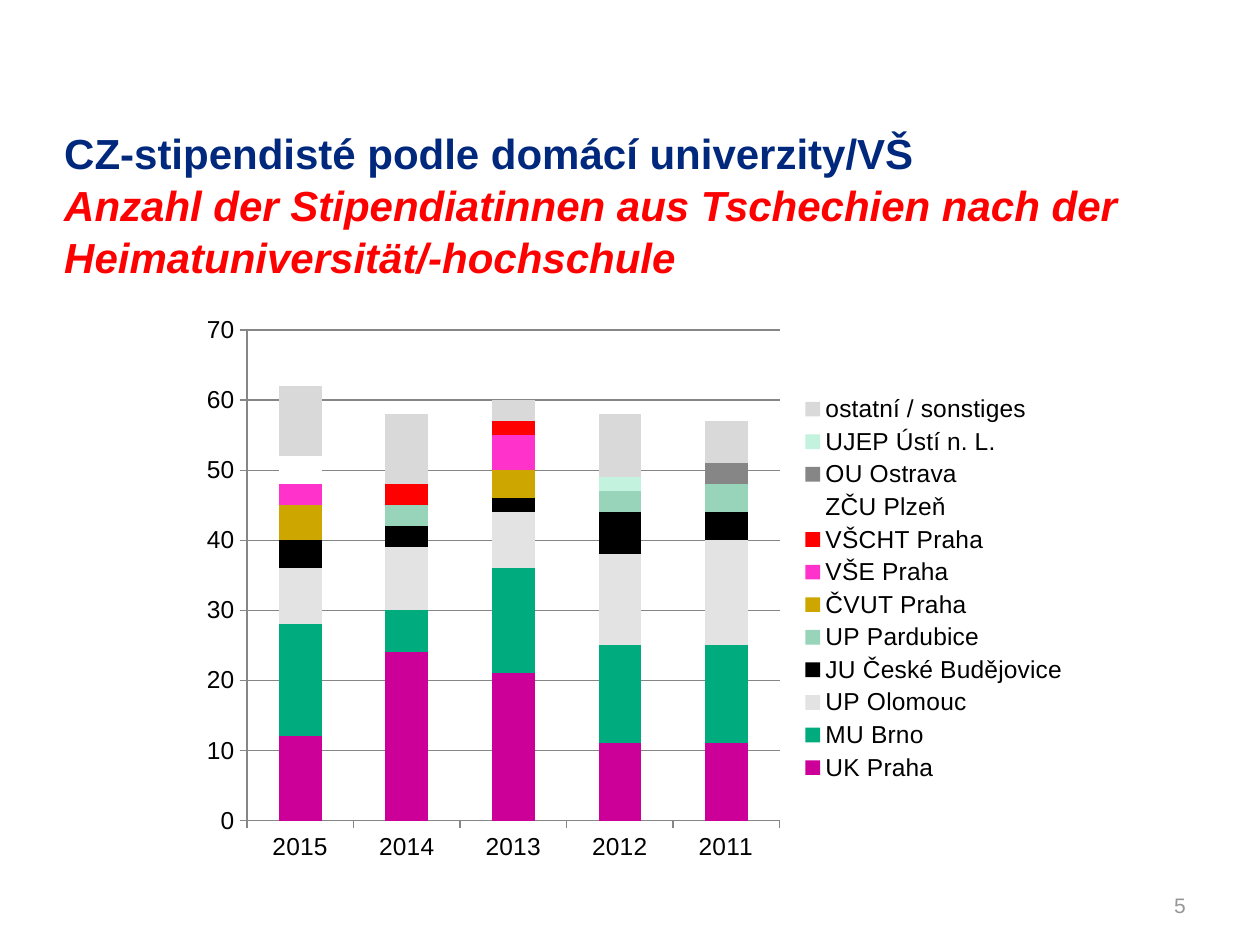
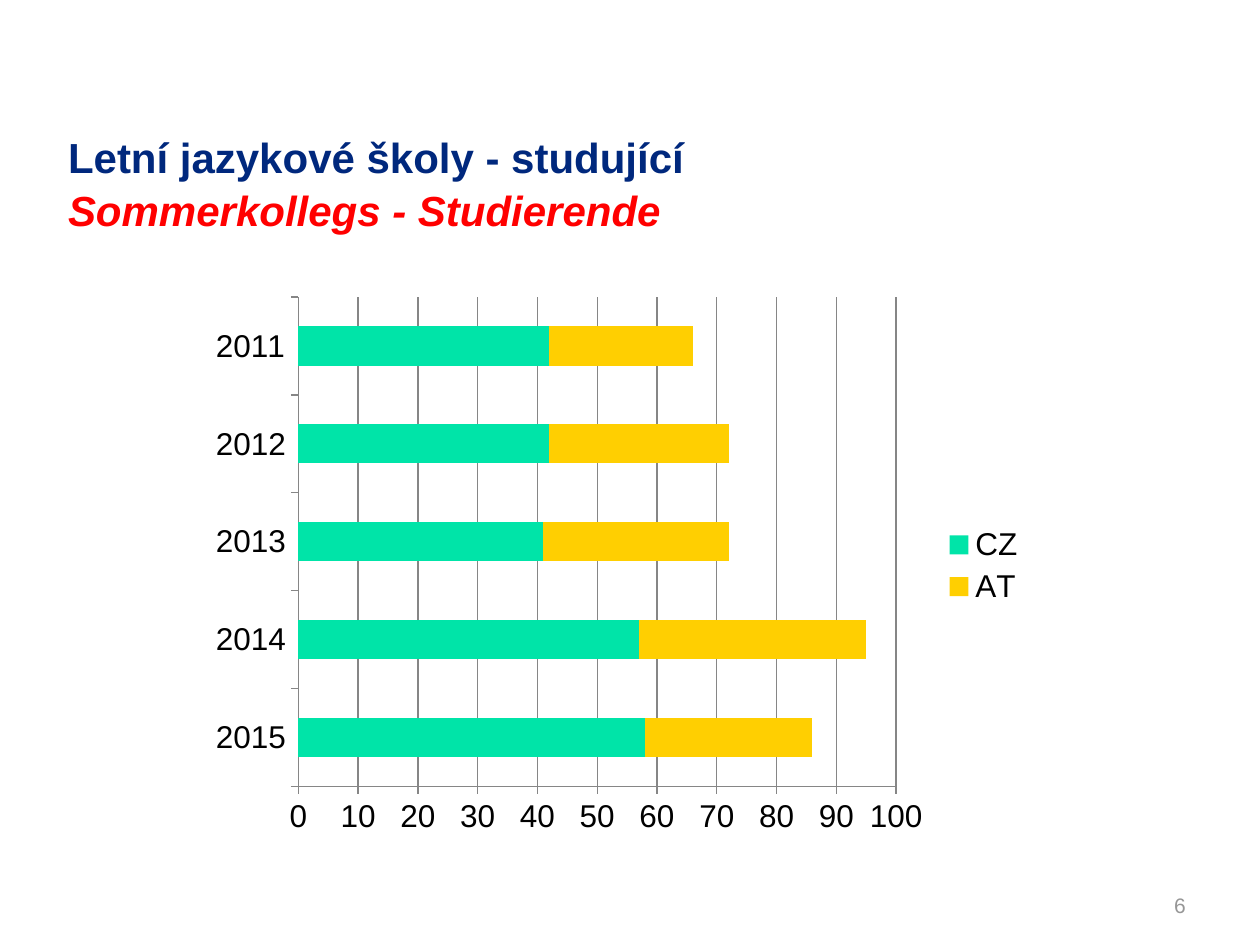
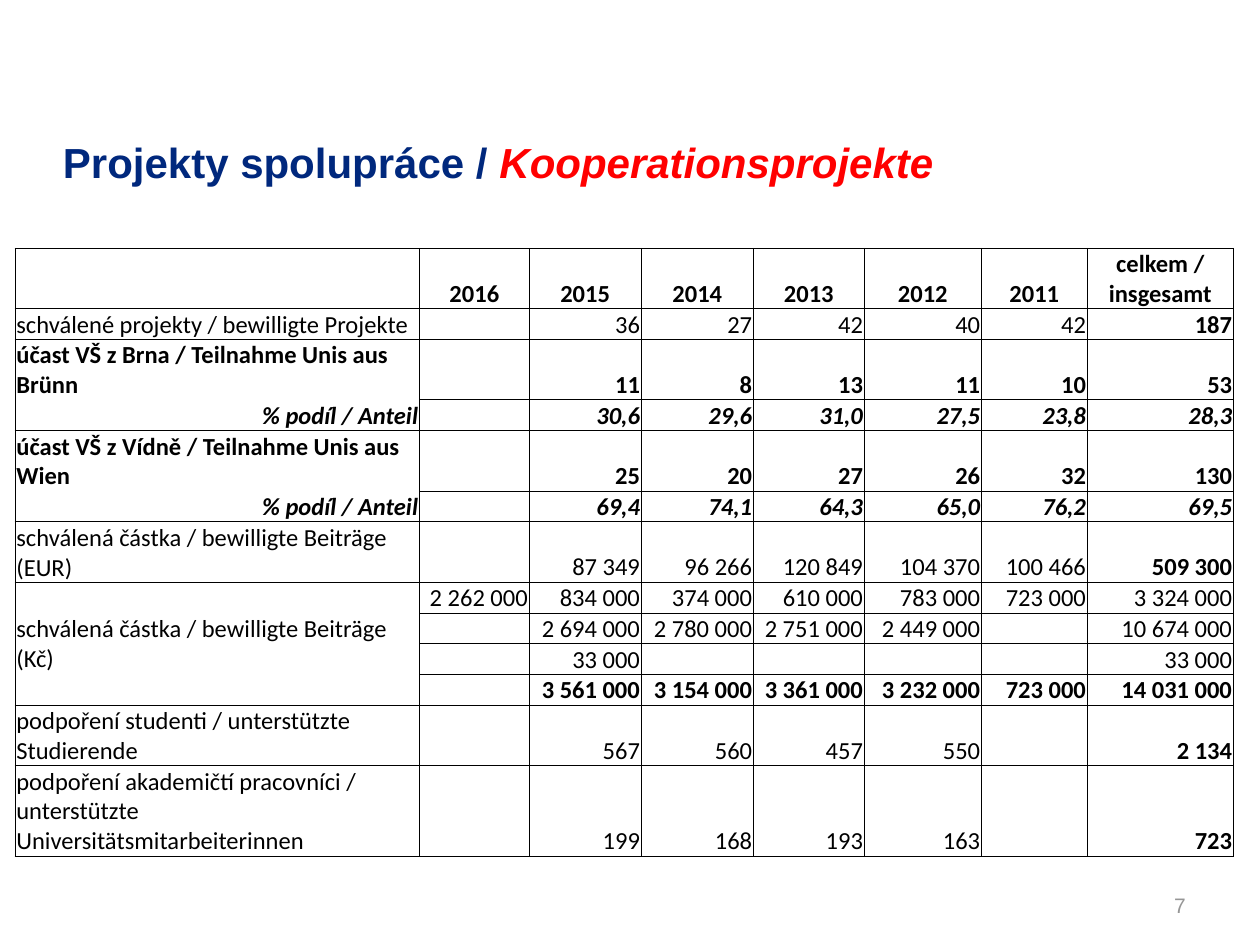
from lxml import etree
from pptx import Presentation
from pptx import util as u
from pptx.chart.data import CategoryChartData
from pptx.dml.color import RGBColor
from pptx.enum import chart as ch, text
from pptx.oxml.ns import qn

COLORS = {
    "title": "00287D", "german": "FF0000", "number": "969696", "ink": "000000", "grid": "868686",
    "magenta": "CC0099", "green": "00AB7E", "pale": "E3E3E3", "mint": "98D4B9", "ochre": "CDA600",
    "pink": "FF33CC", "red": "FF0000", "white": "FFFFFF", "light_mint": "C3F2DE", "silver": "D9D9D9",
    "turquoise": "00E4A8", "yellow": "FFCF01",
}
UNIT = u.Inches(0.1)  # the slide is a grid of 100 columns by 75 rows
COLS, ROWS = 100, 75
LEFT, CENTER, RIGHT = text.PP_ALIGN.LEFT, text.PP_ALIGN.CENTER, text.PP_ALIGN.RIGHT
BOTTOM, MIDDLE = text.MSO_ANCHOR.BOTTOM, text.MSO_ANCHOR.MIDDLE
YEARS = ["2015", "2014", "2013", "2012", "2011"]


def rgb(name):
    return RGBColor.from_string(COLORS[name])


def grid(*lengths):
    return [round(n * UNIT) for n in lengths]


def set_font(font, size, color="ink", face="Arial", bold=False, italic=False):
    font.name, font.size, font.bold, font.italic = face, u.Pt(size), bold, italic
    font.color.rgb = rgb(color)


def write(p, words, align=LEFT, **fmt):
    """Add one run to a paragraph."""
    p.alignment = align
    r = p.add_run()
    r.text = words
    set_font(r.font, **fmt)


def add_box(s, box, side=0.1):
    tf = s.shapes.add_textbox(*grid(*box)).text_frame
    tf.word_wrap, tf.vertical_anchor = True, BOTTOM
    tf.margin_left = tf.margin_right = u.Inches(side)
    return tf.paragraphs[0]


def add_page(prs, number, title_at, czech, german, broken=True):
    """Blank slide with the two-language title and the page number."""
    s = prs.slides.add_slide(prs.slide_layouts[6])
    p = add_box(s, (*title_at, 88.4, 7.1), side=0)
    p.line_spacing = 1.04
    write(p, czech, size=24, color="title", bold=True)
    if broken:
        p.add_line_break()
    write(p, german, size=24, color="german", bold=True, italic=True)
    write(add_box(s, (75, 68.3, 20.1, 5)), str(number), align=RIGHT, size=12, color="number")
    return s


def add_stacked_chart(s, box, kind, size, series, top):
    data = CategoryChartData()
    data.categories = YEARS
    for name, _, values in series:
        data.add_series(name, values)
    chart = s.shapes.add_chart(kind, *grid(*box), data).chart
    set_font(chart.font, size)
    chart.has_title = False
    chart.has_legend = True
    chart.legend.position = ch.XL_LEGEND_POSITION.RIGHT
    chart.legend.include_in_layout = False

    # Bars
    plot = chart.plots[0]
    plot.gap_width, plot.overlap, plot.vary_by_categories = 150, 100, False
    for bar, (_, color, _) in zip(plot.series, series):
        bar.format.fill.solid()
        bar.format.fill.fore_color.rgb = rgb(color)
        bar.format.line.fill.background()

    # Axes
    values_axis = chart.value_axis
    values_axis.minimum_scale, values_axis.maximum_scale, values_axis.major_unit = 0, top, 10
    values_axis.has_major_gridlines = True
    chart.category_axis.has_major_gridlines = False
    for axis in (chart.category_axis, values_axis):
        axis.major_tick_mark = ch.XL_TICK_MARK.OUTSIDE
    for part in (chart.category_axis, values_axis, values_axis.major_gridlines):
        part.format.line.color.rgb = rgb("grid")
        part.format.line.width = u.Pt(0.75)


def set_borders(cell, hidden=""):
    """Thin black edges, except the hidden ones (letters of L, R, T, B)."""
    tcPr = cell._tc.get_or_add_tcPr()
    for side in "LRTB":
        ln = etree.SubElement(tcPr, qn("a:ln" + side), w=str(u.Pt(0.5)))
        if side in hidden:
            etree.SubElement(ln, qn("a:noFill"))
        else:
            fill = etree.SubElement(ln, qn("a:solidFill"))
            etree.SubElement(fill, qn("a:srgbClr"), val=COLORS["ink"])


def fill_cell(cell, words, align, bold, italic, hidden=""):
    set_borders(cell, hidden)
    cell.fill.background()
    cell.vertical_anchor = BOTTOM
    cell.margin_left = cell.margin_right = cell.margin_top = u.Inches(0.01)
    cell.margin_bottom = 0
    p = cell.text_frame.paragraphs[0]
    if words:
        write(p, words, align, size=14, face="Calibri", bold=bold, italic=italic)
    else:
        etree.SubElement(p._p, qn("a:endParaRPr"), sz="1400")


def add_project_table(s, corner, widths, rows):
    """Rows hold line count, style, label and values; in style "total" only the sum is bold."""
    line = 2.4
    box = (*corner, sum(widths), line * sum(r[0] for r in rows))
    table = s.shapes.add_table(len(rows), len(widths), *grid(*box)).table
    table.first_row = table.horz_banding = False
    for column, width in zip(table.columns, grid(*widths)):
        column.width = width
    for i, (lines, style, label, values) in enumerate(rows):
        table.rows[i].height = round(line * lines * UNIT)
        share = style == "share"
        strong = style in ("head", "bold", "share")
        hidden = "T" if share else "B" if rows[min(i + 1, len(rows) - 1)][1] == "share" else ""
        fill_cell(table.cell(i, 0), label, RIGHT if share else LEFT, strong, share, hidden)
        numbers = values.split("|")
        for j, number in enumerate(numbers, 1):
            bold = strong or (style == "total" and j == len(numbers))
            fill_cell(table.cell(i, j), number, CENTER if style == "head" else RIGHT, bold, share)
    return table


UNIVERSITIES = [
    ("UK Praha", "magenta", (12, 24, 21, 11, 11)),
    ("MU Brno", "green", (16, 6, 15, 14, 14)),
    ("UP Olomouc", "pale", (8, 9, 8, 13, 15)),
    ("JU České Budějovice", "ink", (4, 3, 2, 6, 4)),
    ("UP Pardubice", "mint", (None, 3, None, 3, 4)),
    ("ČVUT Praha", "ochre", (5, None, 4, None, None)),
    ("VŠE Praha", "pink", (3, None, 5, None, None)),
    ("VŠCHT Praha", "red", (None, 3, 2, None, None)),
    ("ZČU Plzeň", "white", (4, None, None, None, None)),
    ("OU Ostrava", "grid", (None, None, None, None, 3)),
    ("UJEP Ústí n. L.", "light_mint", (None, None, None, 2, None)),
    ("ostatní / sonstiges", "silver", (10, 10, 3, 9, 6)),
]
SUMMER_SCHOOLS = [
    ("CZ", "turquoise", (58, 57, 41, 42, 42)),
    ("AT", "yellow", (28, 38, 31, 30, 24)),
]
PROJECTS = [
    (2, "head", "", "2016|2015|2014|2013|2012|2011|celkem / insgesamt"),
    (1, "total", "schválené projekty / bewilligte Projekte", "|36|27|42|40|42|187"),
    (2, "bold", "účast VŠ z Brna / Teilnahme Unis aus Brünn", "|11|8|13|11|10|53"),
    (1, "share", "% podíl / Anteil", "|30,6|29,6|31,0|27,5|23,8|28,3"),
    (2, "bold", "účast VŠ z Vídně / Teilnahme Unis aus Wien", "|25|20|27|26|32|130"),
    (1, "share", "% podíl / Anteil", "|69,4|74,1|64,3|65,0|76,2|69,5"),
    (2, "total", "schválená částka / bewilligte Beiträge (EUR)",
     "|87 349|96 266|120 849|104 370|100 466|509 300"),
    (1, "plain", "schválená částka / bewilligte Beiträge (Kč)",
     "2 262 000|834 000|374 000|610 000|783 000|723 000|3 324 000"),
    (1, "plain", "", "|2 694 000|2 780 000|2 751 000|2 449 000||10 674 000"),
    (1, "plain", "", "|33 000|||||33 000"),
    (1, "bold", "", "|3 561 000|3 154 000|3 361 000|3 232 000|723 000|14 031 000"),
    (2, "total", "podpoření studenti / unterstützte Studierende", "|567|560|457|550||2 134"),
    (3, "total", "podpoření akademičtí pracovníci / unterstützte Universitätsmitarbeiterinnen",
     "|199|168|193|163||723"),
]


def main():
    prs = Presentation()
    prs.slide_width, prs.slide_height = grid(COLS, ROWS)

    # Scholarship holders by home university
    s = add_page(prs, 5, (5.1, 15.8), "CZ-stipendisté podle domácí univerzity/VŠ",
                 "Anzahl der Stipendiatinnen aus Tschechien nach der Heimatuniversität/-hochschule")
    add_stacked_chart(s, (15, 24.2, 70.8, 45), ch.XL_CHART_TYPE.COLUMN_STACKED, 14, UNIVERSITIES, 70)

    # Summer language schools
    s = add_page(prs, 6, (5.4, 12), "Letní jazykové školy - studující", "Sommerkollegs - Studierende")
    add_stacked_chart(s, (15.8, 22.7, 66.6, 44.4), ch.XL_CHART_TYPE.BAR_STACKED, 18, SUMMER_SCHOOLS, 100)

    # Cooperation projects
    s = add_page(prs, 7, (5, 8.2), "Projekty spolupráce / ", "Kooperationsprojekte", broken=False)
    widths = (32.1, 8.7, 8.9, 8.9, 8.8, 9.3, 8.4, 11.6)
    table = add_project_table(s, (1.2, 19.7), widths, PROJECTS)
    crowns = table.cell(7, 0)
    crowns.merge(table.cell(10, 0))
    crowns.vertical_anchor = MIDDLE

    prs.save("out.pptx")


if __name__ == "__main__":
    main()
